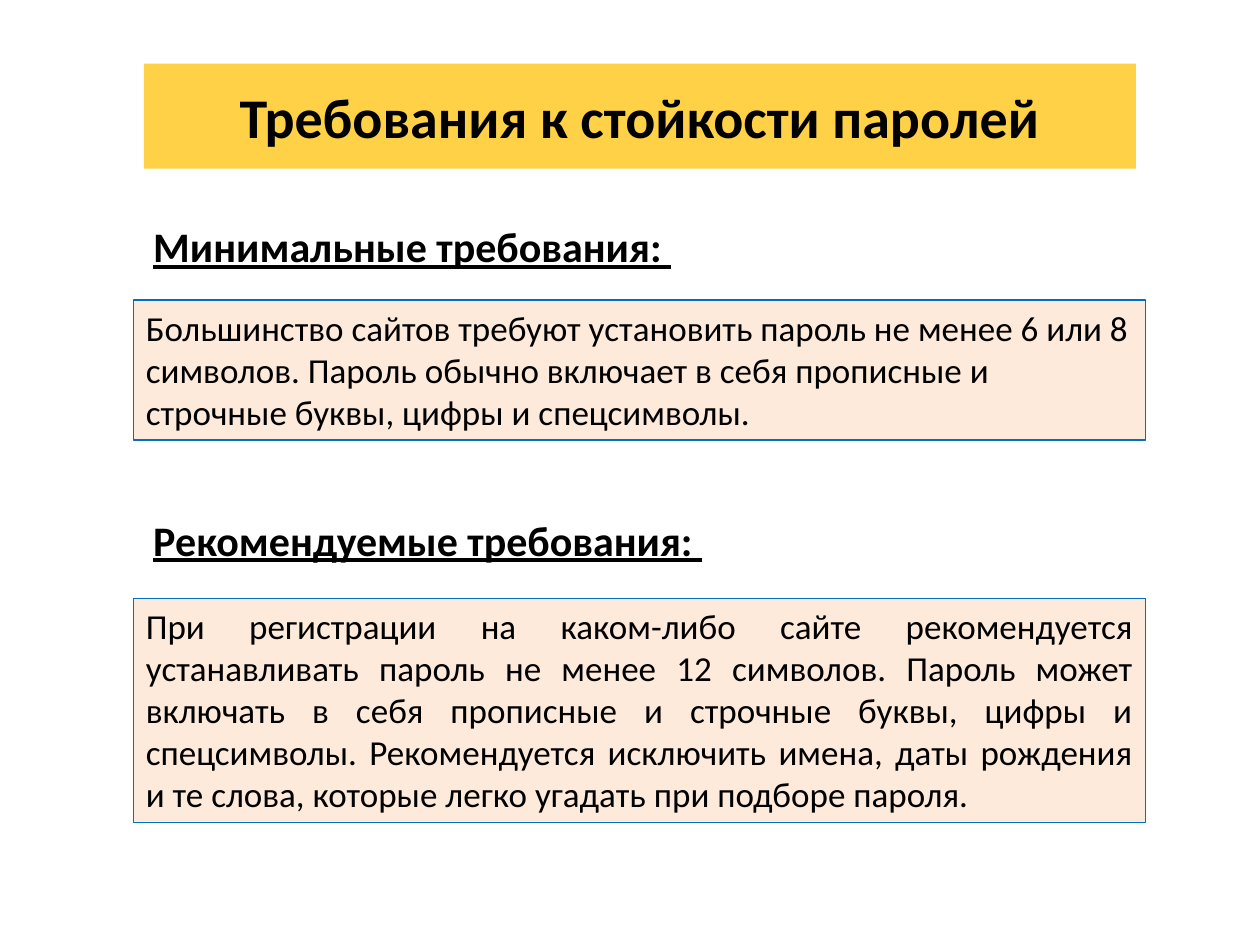
import pptx
import pptx.util
import pptx.dml.color
import pptx.enum.shapes
import pptx.enum.text
import pptx.oxml.ns
from lxml import etree

Cm = pptx.util.Cm
Pt = pptx.util.Pt
RGBColor = pptx.dml.color.RGBColor
ALIGN = pptx.enum.text.PP_ALIGN
ANCHOR = pptx.enum.text.MSO_ANCHOR

BLACK = RGBColor(0x00, 0x00, 0x00)
GOLD = RGBColor(0xFF, 0xC0, 0x00)
PEACH = RGBColor(0xFD, 0xEA, 0xDA)
BLUE = RGBColor(0x00, 0x70, 0xC0)

HEADING_LEFT, HEADING_WIDTH, HEADING_HEIGHT = Cm(2.84), Cm(16.28), Cm(1.27)
PANEL_LEFT, PANEL_WIDTH = Cm(2.69), Cm(20.4)

SECTIONS = [
    ("Минимальные требования: ", 4.32,
     "Большинство сайтов требуют установить пароль не менее 6 или 8 символов. "
     "Пароль обычно включает в себя прописные и строчные буквы, цифры и спецсимволы.",
     6.05, 2.82, ALIGN.LEFT),
    ("Рекомендуемые требования: ", 10.24,
     "При регистрации на каком-либо сайте рекомендуется устанавливать пароль "
     "не менее 12 символов. Пароль может включать в себя прописные и строчные буквы, "
     "цифры и спецсимволы. Рекомендуется исключить имена, даты рождения и те слова, "
     "которые легко угадать при подборе пароля.",
     12.06, 4.52, ALIGN.JUSTIFY),
]


def write_text(shape, text, size=20, bold=False, underline=False,
               align=ALIGN.LEFT, anchor=ANCHOR.TOP):
    frame = shape.text_frame
    frame.word_wrap = True
    frame.auto_size = pptx.enum.text.MSO_AUTO_SIZE.SHAPE_TO_FIT_TEXT
    frame.vertical_anchor = anchor
    paragraph = frame.paragraphs[0]
    paragraph.alignment = align
    run = paragraph.add_run()
    run.text = text
    run.font.name = "Calibri"
    run.font.size = Pt(size)
    run.font.bold = bold
    run.font.underline = underline
    run.font.color.rgb = BLACK


def set_opacity(shape, percent):
    color = shape.fill._xPr.find(".//" + pptx.oxml.ns.qn("a:srgbClr"))
    alpha = etree.SubElement(color, pptx.oxml.ns.qn("a:alpha"))
    alpha.set("val", str(percent * 1000))


def add_title(slide, text):
    title = slide.shapes.title
    title.left, title.top = Cm(2.9), Cm(1.53)
    title.width, title.height = Cm(20), Cm(1.62)
    title.fill.solid()
    title.fill.fore_color.rgb = GOLD
    set_opacity(title, 72)
    write_text(title, text, size=32, bold=True, align=ALIGN.CENTER, anchor=ANCHOR.MIDDLE)


def add_heading(slide, text, top):
    heading = slide.shapes.add_textbox(HEADING_LEFT, Cm(top), HEADING_WIDTH, HEADING_HEIGHT)
    write_text(heading, text, size=24, bold=True, underline=True)


def add_panel(slide, text, top, height, align):
    panel = slide.shapes.add_shape(pptx.enum.shapes.MSO_SHAPE.RECTANGLE,
                                   PANEL_LEFT, Cm(top), PANEL_WIDTH, Cm(height))
    panel.shadow.inherit = False
    panel.fill.solid()
    panel.fill.fore_color.rgb = PEACH
    panel.line.color.rgb = BLUE
    panel.line.width = Pt(0.75)
    write_text(panel, text, align=align)


def main():
    presentation = pptx.Presentation()
    presentation.slide_width, presentation.slide_height = Cm(25.4), Cm(19.05)
    slide = presentation.slides.add_slide(presentation.slide_layouts[5])
    add_title(slide, "Требования к стойкости паролей")
    for heading, heading_top, requirement, panel_top, panel_height, align in SECTIONS:
        add_heading(slide, heading, heading_top)
        add_panel(slide, requirement, panel_top, panel_height, align)
    presentation.save("out.pptx")


if __name__ == "__main__":
    main()
